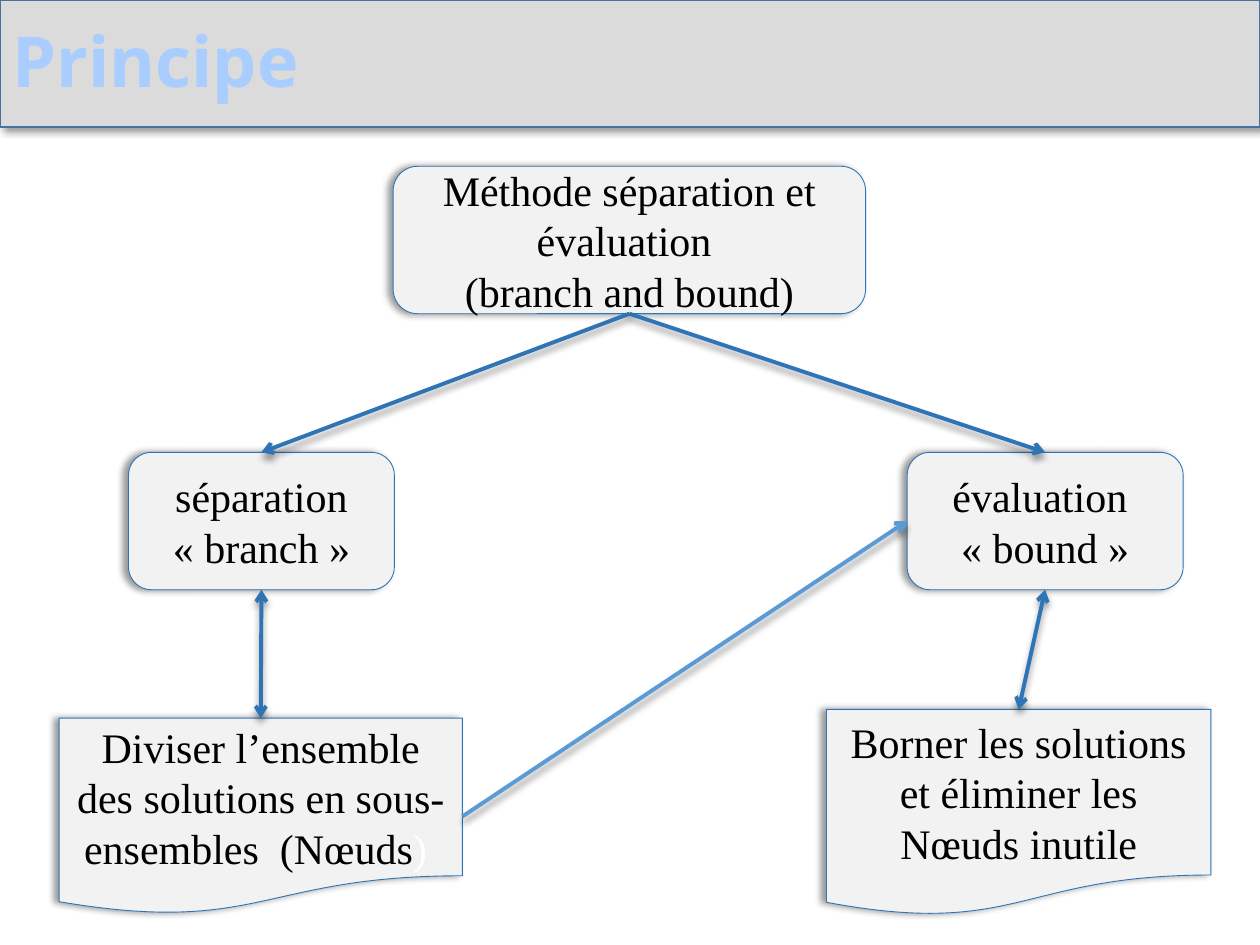
import pptx
import pptx.util
import pptx.dml.color
import pptx.enum.shapes
import pptx.enum.text
import pptx.oxml.ns
import lxml.etree

Inches, Pt = pptx.util.Inches, pptx.util.Pt
SHAPES = pptx.enum.shapes.MSO_SHAPE
COLOURS = {
    "band": "DBDBDB", "band line": "43739E", "title": "A9CDFF", "box": "F2F2F2",
    "dark blue": "2E75B6", "light blue": "5B9BD5", "black": "000000", "white": "FFFFFF",
}
TITLE = "Principe"
BOXES = {
    "method": (SHAPES.ROUNDED_RECTANGLE, (3.12, 1.32, 3.75, 1.17), [
        [("Méthode séparation et évaluation ", "black")], [("(branch and bound)", "black")]]),
    "branch": (SHAPES.ROUNDED_RECTANGLE, (1.02, 3.59, 2.11, 1.09), [
        [("séparation", "black")], [("« branch »", "black")]]),
    "bound": (SHAPES.ROUNDED_RECTANGLE, (7.2, 3.59, 2.19, 1.09), [
        [("évaluation ", "black")], [("« bound »", "black")]]),
    "divide": (SHAPES.FLOWCHART_DOCUMENT, (0.47, 5.7, 3.2, 1.56), [
        [("Diviser l’ensemble des solutions en sous-ensembles  (Nœuds", "black"), (") ", "white")]]),
    "prune": (SHAPES.FLOWCHART_DOCUMENT, (6.56, 5.63, 3.05, 1.64), [
        [("Borner les solutions et éliminer les Nœuds inutile", "black")]]),
}
TOP, LEFT, BOTTOM, RIGHT = range(4)
ARROWS = [
    ("method", BOTTOM, "bound", TOP, "dark blue", ["tailEnd"]),
    ("method", BOTTOM, "branch", TOP, "dark blue", ["tailEnd"]),
    ("bound", BOTTOM, "prune", TOP, "dark blue", ["headEnd", "tailEnd"]),
    ("divide", RIGHT, "bound", LEFT, "light blue", ["tailEnd"]),
    ("branch", BOTTOM, "divide", TOP, "dark blue", ["headEnd", "tailEnd"]),
]


def colour(name):
    return pptx.dml.color.RGBColor.from_string(COLOURS[name])


def add_element(parent, tag, **attributes):
    return lxml.etree.SubElement(parent, pptx.oxml.ns.qn(tag), attributes)


def add_shadow(shape, degrees):
    effects = add_element(shape._element.spPr, "a:effectLst")
    shadow = add_element(effects, "a:outerShdw", blurRad=str(Pt(4)), dist=str(Pt(3)),
                         dir=str(degrees * 60000), algn="ctr", rotWithShape="0")
    black = add_element(shadow, "a:srgbClr", val=COLOURS["black"])
    add_element(black, "a:alpha", val="40000")


def set_line(shape, name, width):
    shape.line.color.rgb = colour(name)
    shape.line.width = Pt(width)


def add_box(slide, kind, place, fill, line, width, degrees):
    shape = slide.shapes.add_shape(kind, *map(Inches, place))
    shape.fill.solid()
    shape.fill.fore_color.rgb = colour(fill)
    set_line(shape, line, width)
    add_shadow(shape, degrees)
    return shape


def add_run(paragraph, text, name, font, size, bold=False):
    run = paragraph.add_run()
    run.text = text
    run.font.name = font
    run.font.size = Pt(size)
    run.font.bold = bold
    run.font.color.rgb = colour(name)


def write_box(shape, paragraphs):
    frame = shape.text_frame
    frame.word_wrap = True
    frame.vertical_anchor = pptx.enum.text.MSO_ANCHOR.MIDDLE
    for index, runs in enumerate(paragraphs):
        paragraph = frame.add_paragraph() if index else frame.paragraphs[0]
        paragraph.alignment = pptx.enum.text.PP_ALIGN.CENTER
        for text, name in runs:
            add_run(paragraph, text, name, "Times New Roman", 24)


def add_arrow(slide, start, start_site, end, end_site, name, heads):
    arrow = slide.shapes.add_connector(pptx.enum.shapes.MSO_CONNECTOR.STRAIGHT, 0, 0, 0, 0)
    arrow.begin_connect(start, start_site)
    arrow.end_connect(end, end_site)
    set_line(arrow, name, 2.25)
    for head in heads:
        add_element(arrow.line._get_or_add_ln(), "a:" + head, type="arrow")
    add_shadow(arrow, 90)


def add_title(slide):
    add_box(slide, SHAPES.RECTANGLE, (0, 0, 10, 1.01), "band", "band line", 1, 45)
    title = slide.shapes.title
    title.left, title.top, title.width, title.height = map(Inches, (0, 0, 10, 0.95))
    title.text_frame.vertical_anchor = pptx.enum.text.MSO_ANCHOR.MIDDLE
    paragraph = title.text_frame.paragraphs[0]
    paragraph.alignment = pptx.enum.text.PP_ALIGN.LEFT
    add_run(paragraph, TITLE, "title", "Open Sans", 40, bold=True)
    slide.shapes._spTree.append(title._element)


def main():
    """Build the branch and bound principle slide."""
    presentation = pptx.Presentation()
    presentation.slide_width, presentation.slide_height = Inches(10), Inches(7.5)
    slide = presentation.slides.add_slide(presentation.slide_layouts[5])
    boxes = {}
    for key, (kind, place, paragraphs) in BOXES.items():
        boxes[key] = add_box(slide, kind, place, "box", "dark blue", 0.5, 180)
        write_box(boxes[key], paragraphs)
    for start, start_site, end, end_site, name, heads in ARROWS:
        add_arrow(slide, boxes[start], start_site, boxes[end], end_site, name, heads)
    add_title(slide)
    presentation.save("out.pptx")


if __name__ == "__main__":
    main()
